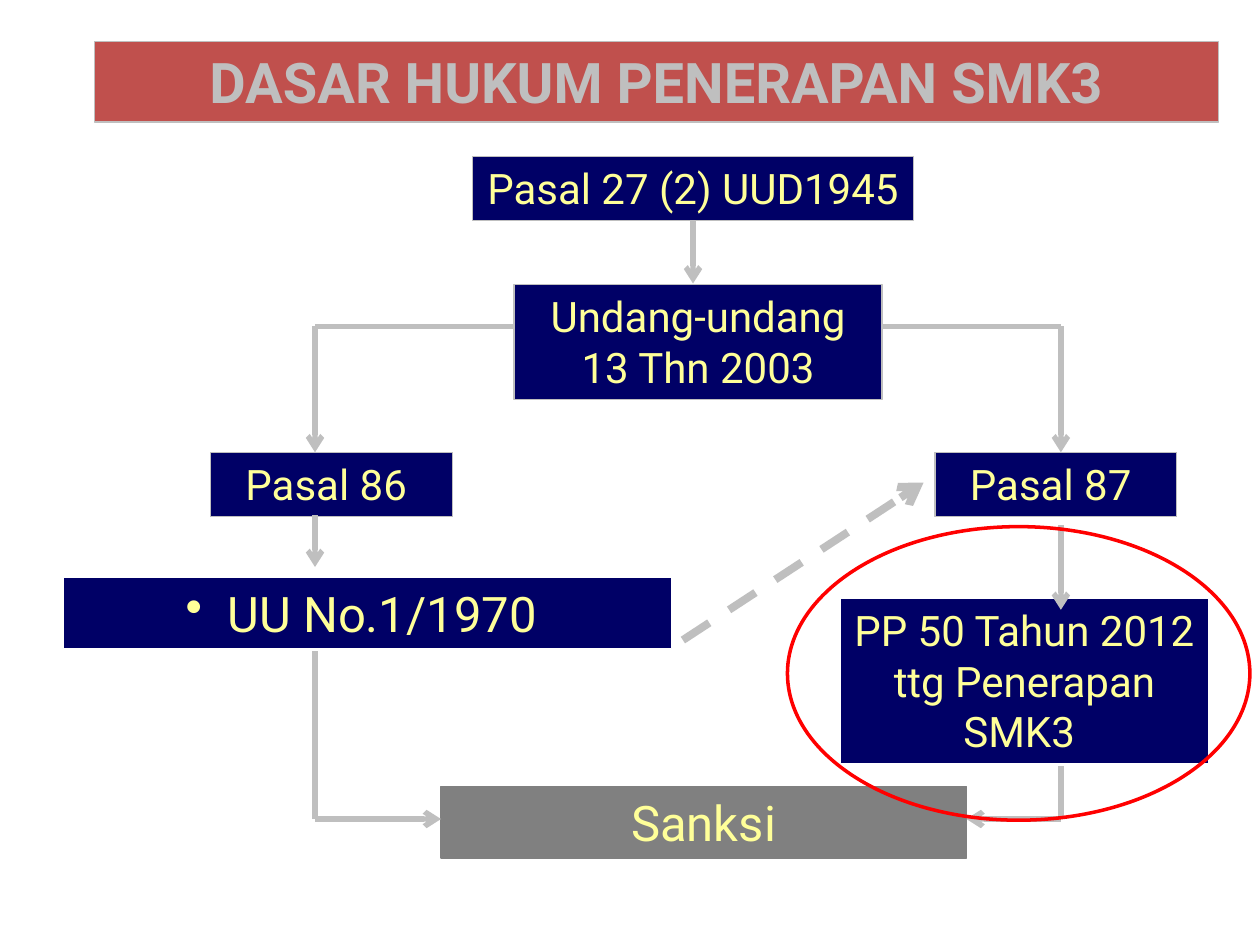
from lxml.etree import SubElement
from pptx import Presentation
from pptx.dml.color import RGBColor
from pptx.enum.dml import MSO_LINE
from pptx.enum.shapes import MSO_CONNECTOR, MSO_SHAPE
from pptx.enum.text import MSO_ANCHOR, MSO_AUTO_SIZE, PP_ALIGN
from pptx.oxml.ns import qn
from pptx.util import Inches, Pt

COLORS = {
    "navy": "000066",
    "yellow": "FFFF99",
    "silver": "BFBFBF",
    "gray": "808080",
    "white": "FFFFFF",
    "brick": "C0504D",
    "red": "FF0000",
}


def color(name):
    return RGBColor.from_string(COLORS[name])


class FlowSlide:
    font = "Roboto"

    def __init__(self, deck):
        self.slide = deck.slides.add_slide(deck.slide_layouts[6])

    def box(self, text, left, top, width, height, size=24, fill="navy",
            border="silver", ink="yellow", bold=False, bullet=False):
        box = self.slide.shapes.add_shape(
            MSO_SHAPE.RECTANGLE, Inches(left), Inches(top), Inches(width), Inches(height))
        box.shadow.inherit = False
        box.fill.solid()
        box.fill.fore_color.rgb = color(fill)
        box.line.color.rgb = color(border)
        box.line.width = Pt(0.75)
        frame = box.text_frame
        frame.word_wrap = True
        frame.auto_size = MSO_AUTO_SIZE.SHAPE_TO_FIT_TEXT
        frame.vertical_anchor = MSO_ANCHOR.TOP
        para = frame.paragraphs[0]
        para.alignment = PP_ALIGN.CENTER
        if bullet:
            SubElement(para._p.get_or_add_pPr(), qn("a:buChar")).set("char", "•")
        span = para.add_run()
        span.text = text
        span.font.name = self.font
        span.font.size = Pt(size)
        span.font.bold = bold
        span.font.color.rgb = color(ink)
        return box

    def line(self, start, end, arrow=True, width=3, dashed=False):
        line = self.slide.shapes.add_connector(
            MSO_CONNECTOR.STRAIGHT, *(Inches(value) for value in (*start, *end)))
        line.line.color.rgb = color("silver")
        line.line.width = Pt(width)
        if dashed:
            line.line.dash_style = MSO_LINE.DASH
        if arrow:
            SubElement(line.line._get_or_add_ln(), qn("a:tailEnd")).set("type", "arrow")
        SubElement(line._element.spPr, qn("a:effectLst"))
        return line

    def elbow(self, start, corner, end):
        self.line(start, corner, arrow=False)
        self.line(corner, end)

    def ring(self, left, top, width, height):
        ring = self.slide.shapes.add_shape(
            MSO_SHAPE.OVAL, Inches(left), Inches(top), Inches(width), Inches(height))
        ring.shadow.inherit = False
        ring.fill.background()
        ring.line.color.rgb = color("red")
        ring.line.width = Pt(2)


def main():
    deck = Presentation()
    deck.slide_width, deck.slide_height = Inches(10), Inches(7.5)
    flow = FlowSlide(deck)
    left_x, right_x = 2.5, 8.42
    branch_y, article_y, sanction_y = 2.59, 3.59, 6.5

    constitution = flow.box("Pasal 27 (2) UUD1945", 3.75, 1.24, 3.5, 0.51)
    flow.box("Undang-undang 13 Thn 2003", 4.08, 2.26, 2.92, 0.91)
    for text, left in (("Pasal 86 ", 1.67), ("Pasal 87 ", 7.42)):
        flow.box(text, left, article_y, 1.92, 0.51)
    flow.box(" UU No.1/1970", 0.5, 4.58, 4.83, 0.57, size=28, border="white", bullet=True)
    flow.box("PP 50 Tahun 2012 ttg Penerapan SMK3 ", 6.67, 4.75, 2.92, 1.31, border="white")

    flow.elbow((4.08, branch_y), (left_x, branch_y), (left_x, article_y))
    flow.elbow((7, branch_y), (right_x, branch_y), (right_x, article_y))
    flow.line((5.5, 1.75), (5.5, 2.25)).begin_connect(constitution, 2)
    flow.line((right_x, 4.17), (right_x, 4.84))
    flow.line((left_x, 4.09), (left_x, 4.5))

    flow.box("Sanksi", 3.5, 6.24, 4.17, 0.57, size=28, fill="gray", border="gray")
    flow.elbow((left_x, 5.17), (left_x, sanction_y), (3.5, sanction_y))
    flow.elbow((right_x, 6.08), (right_x, sanction_y), (7.67, sanction_y))
    flow.line((5.42, 5.08), (7.33, 3.83), width=4.5, dashed=True)

    flow.box("DASAR HUKUM PENERAPAN SMK3", 0.75, 0.33, 8.92, 0.64, size=32,
             fill="brick", ink="silver", bold=True)
    flow.ring(6.25, 4.18, 3.67, 2.33)
    deck.save("out.pptx")


if __name__ == "__main__":
    main()
